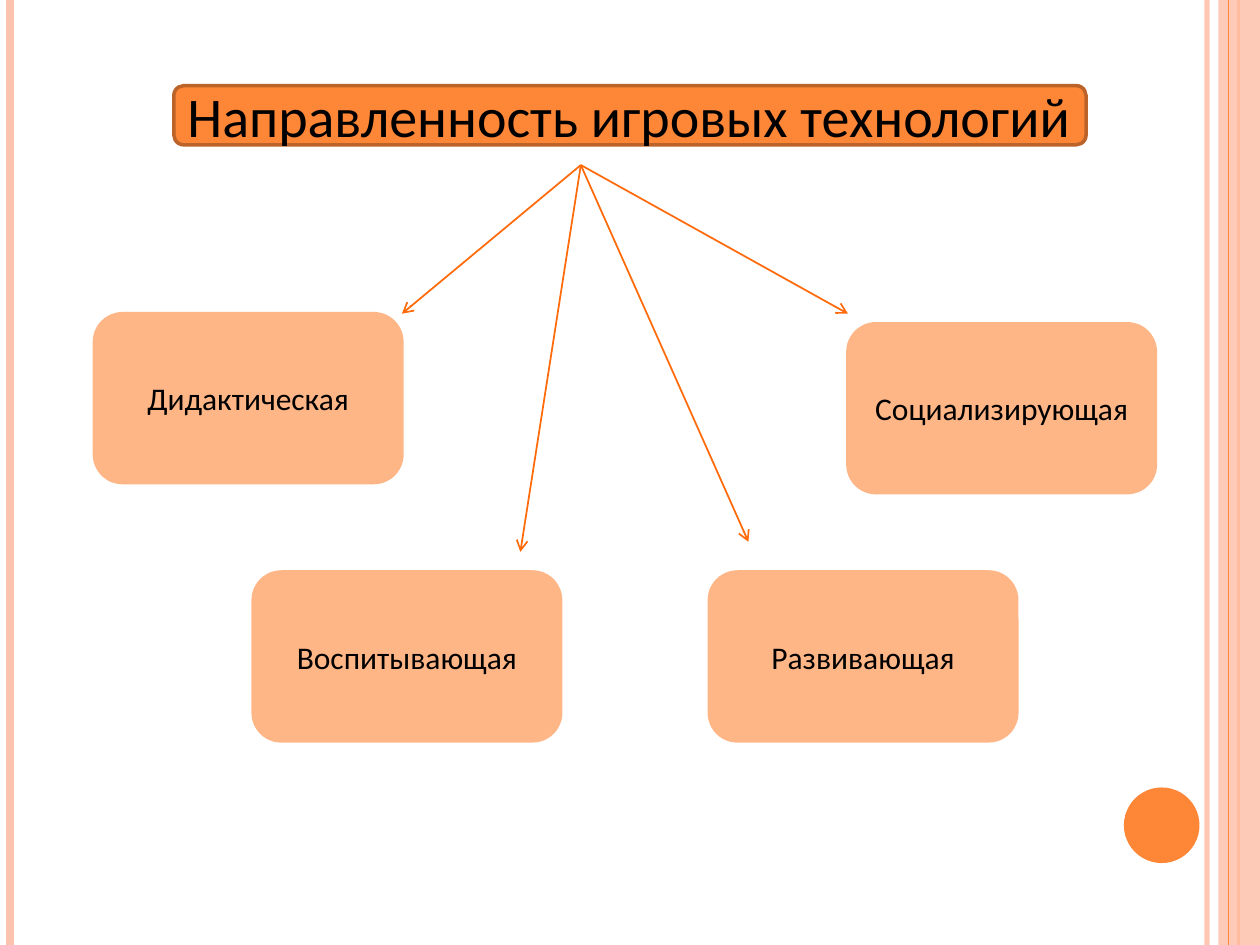
from dataclasses import dataclass
from lxml.etree import SubElement
from pptx import Presentation
from pptx.dml.color import RGBColor
from pptx.enum.shapes import MSO_CONNECTOR, MSO_SHAPE
from pptx.enum.text import MSO_ANCHOR, PP_ALIGN
from pptx.oxml.ns import qn
from pptx.slide import Slide
from pptx.util import Inches, Pt


def paint(fill, color, alpha=100):
    """Set a solid fill from a hex string and an opacity in percent."""
    fill.solid()
    fill.fore_color.rgb = RGBColor.from_string(color)
    if alpha < 100:
        tint = next(fill._xPr.iter(qn("a:srgbClr")))
        SubElement(tint, qn("a:alpha"), val=str(alpha * 1000))


@dataclass
class Board:
    """Style and current slide, on a grid of 100 columns by 75 rows."""
    slide: Slide
    font: str = "Calibri"
    ink: str = "000000"
    main: str = "FE8637"
    edge: str = "BC6329"
    soft: str = "FEB687"
    pale: str = "FEC3AE"
    ray: str = "FF6B0A"
    cell: float = 0.1

    def grid(self, *spots):
        """Turn columns and rows into lengths."""
        return [Inches(spot * self.cell) for spot in spots]

    def label(self, frame, text, size):
        """Put one centred run in a text frame."""
        frame.word_wrap = True
        para = frame.paragraphs[0]
        para.alignment = PP_ALIGN.CENTER
        run = para.add_run()
        run.text = text
        run.font.name = self.font
        run.font.size = Pt(size)
        paint(run.font.fill, self.ink)

    def shape(self, kind, at, fill, line=None, alpha=100):
        """Add a filled preset shape."""
        shape = self.slide.shapes.add_shape(kind, *self.grid(*at))
        shape.shadow.inherit = False
        paint(shape.fill, fill, alpha)
        if line:
            paint(shape.line.fill, line)
            shape.line.width = Pt(2)
        else:
            shape.line.fill.background()
        return shape

    def card(self, left, top, text):
        """Add a rounded card with a label."""
        at = (left, top, 24.4, 13.4)
        card = self.shape(MSO_SHAPE.ROUNDED_RECTANGLE, at, self.soft, self.soft)
        card.text_frame.vertical_anchor = MSO_ANCHOR.MIDDLE
        self.label(card.text_frame, text, 18)

    def title(self, at, text):
        """Add the heading text."""
        box = self.slide.shapes.add_textbox(*self.grid(*at))
        self.label(box.text_frame, text, 32)

    def line(self, start, end, color, width, alpha=100):
        """Add a straight line."""
        line = self.slide.shapes.add_connector(
            MSO_CONNECTOR.STRAIGHT, *self.grid(*start, *end))
        paint(line.line.fill, color, alpha)
        line.line.width = Pt(width)
        SubElement(line._element.spPr, qn("a:effectLst"))
        return line

    def rule(self, col, color, width, alpha=100):
        """Add a line down the whole slide."""
        self.line((col, 0), (col, 75), color, width, alpha)

    def arrow(self, start, end):
        """Add a thin line with an open arrowhead at its end."""
        line = self.line(start, end, self.ray, 1)
        SubElement(line.line._ln, qn("a:tailEnd"), type="arrow")


def main():
    """Build the slide and save it."""
    deck = Presentation()
    deck.slide_width, deck.slide_height = Inches(10), Inches(7.5)
    board = Board(deck.slides.add_slide(deck.slide_layouts[6]))

    board.rule(95.8, board.pale, 3, 93)
    board.rule(0.8, board.pale, 4.5)
    board.rule(98.3, board.main, 1.5)
    board.shape(MSO_SHAPE.RECTANGLE, (96.7, 0, 3.3, 75), board.pale, alpha=87)
    board.rule(97.5, board.main, 0.75)
    board.shape(MSO_SHAPE.OVAL, (89.2, 62.5, 6, 6), board.main)

    board.shape(MSO_SHAPE.ROUNDED_RECTANGLE, (13.8, 6.8, 72.4, 4.7),
                board.main, board.edge)
    for left, top, text in (
            (7.5, 24.9, "Дидактическая"),
            (20.1, 45.4, "Воспитывающая"),
            (56.3, 45.4, "Развивающая"),
            (67.3, 25.7, "Социализирующая")):
        board.card(left, top, text)
    board.title((10.6, 6, 78.7, 6.4), "Направленность игровых технологий")

    for end in ((31.9, 24.9), (41.3, 43.8), (59.4, 43), (67.3, 24.9)):
        board.arrow((46.1, 13.1), end)
    deck.save("out.pptx")


if __name__ == "__main__":
    main()
